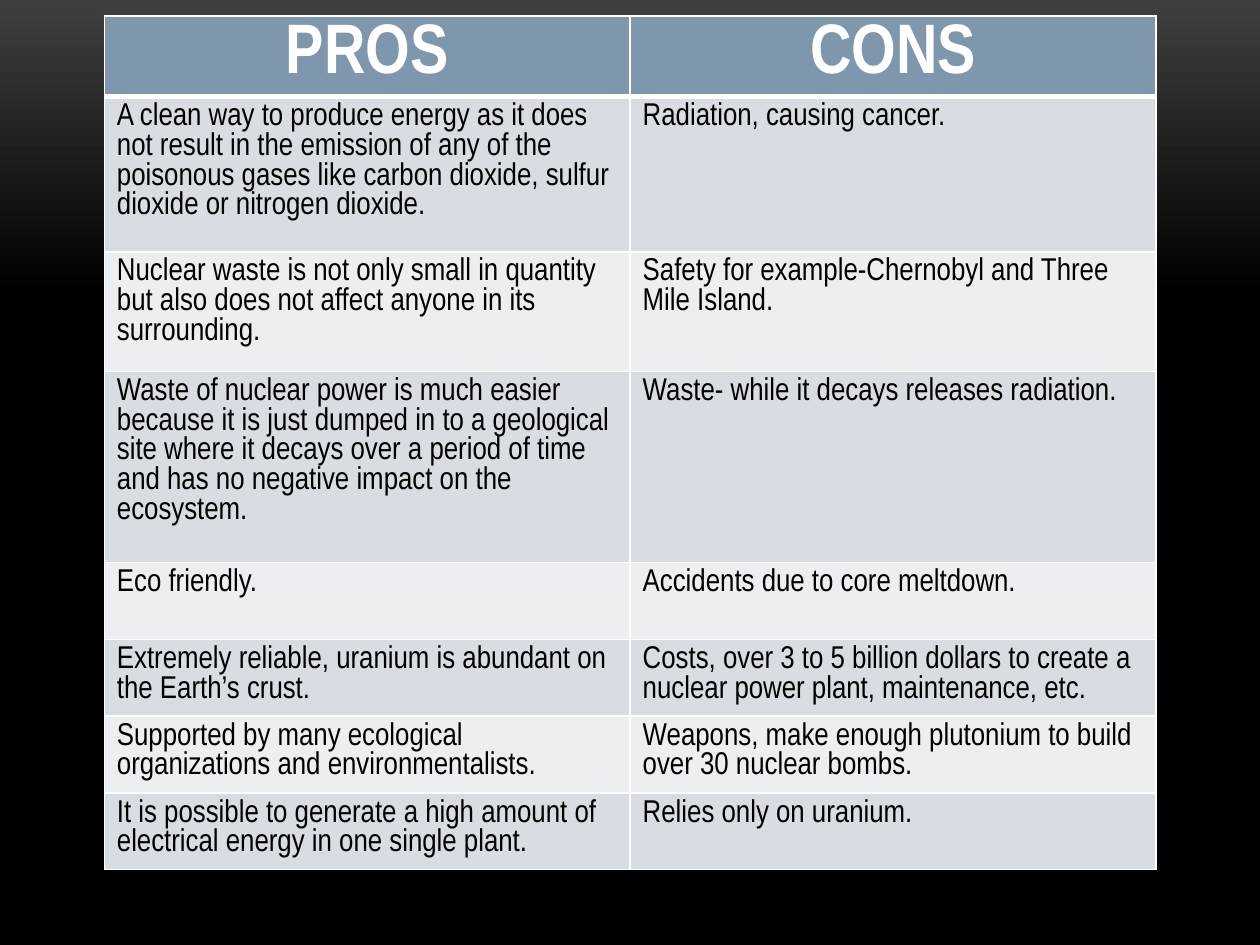
from lxml.etree import fromstring
from pptx import Presentation
from pptx.dml.color import RGBColor
from pptx.enum.text import PP_ALIGN as Align
from pptx.oxml.ns import nsdecls
from pptx.util import Pt

WHITE = RGBColor(0xFF, 0xFF, 0xFF)
BLACK = RGBColor(0, 0, 0)
CHARCOAL = RGBColor(0x3F, 0x3F, 0x3F)
HEADER_BLUE = RGBColor(0x7E, 0x97, 0xAD)
BAND_DARK = RGBColor(0xD8, 0xDD, 0xE3)
BAND_LIGHT = RGBColor(0xEC, 0xEF, 0xF1)

COLUMN_WIDTH = 300.5
ROW_HEIGHTS = [46.1, 88.6, 68.4, 109.2] + [43.9] * 4
ARGUMENTS = [
    ("PROS", "CONS"),
    ("A clean way to produce energy as it does not result in the emission of any of the "
     "poisonous gases like carbon dioxide, sulfur dioxide or nitrogen dioxide.",
     "Radiation, causing cancer."),
    ("Nuclear waste is not only small in quantity but also does not affect anyone in its "
     "surrounding.",
     "Safety for example-Chernobyl and Three Mile Island."),
    ("Waste of nuclear power is much easier because it is just dumped in to a geological "
     "site where it decays over a period of time and has no negative impact on the ecosystem.",
     "Waste- while it decays releases radiation."),
    ("Eco friendly.", "Accidents due to core meltdown."),
    ("Extremely reliable, uranium is abundant on the Earth’s crust.",
     "Costs, over 3 to 5 billion dollars to create a nuclear power plant, maintenance, etc."),
    ("Supported by many ecological organizations and environmentalists.",
     "Weapons, make enough plutonium to build over 30 nuclear bombs."),
    ("It is possible to generate a high amount of electrical energy in one single plant.",
     "Relies only on uranium."),
]


def write(cell, text, size=18, color=BLACK, bold=False, align=Align.LEFT):
    paragraph = cell.text_frame.paragraphs[0]
    paragraph.alignment = align
    run = paragraph.add_run()
    run.text = text
    run.font.name = "Arial Narrow"
    run.font.size = Pt(size)
    run.font.bold = bold
    run.font.color.rgb = color


def add_borders(cell, top=1, bottom=1):
    """Draw white borders; they must come before the fill in the cell properties."""
    sides = [("lnL", 1), ("lnR", 1), ("lnT", top), ("lnB", bottom)]
    for position, (side, width) in enumerate(sides):
        line = fromstring(
            f'<a:{side} {nsdecls("a")} w="{Pt(width)}"><a:solidFill>'
            f'<a:srgbClr val="{WHITE}"/></a:solidFill></a:{side}>')
        cell._tc.get_or_add_tcPr().insert(position, line)


deck = Presentation()
deck.slide_width, deck.slide_height = Pt(720), Pt(540)
slide = deck.slides.add_slide(deck.slide_layouts[6])

backdrop = slide.background.fill
backdrop.gradient()
backdrop.gradient_angle = 270
for stop, (position, color) in zip(backdrop.gradient_stops, [(0, CHARCOAL), (0.31, BLACK)]):
    stop.position = position
    stop.color.rgb = color

comparison = slide.shapes.add_table(
    len(ARGUMENTS), 2, Pt(59.6), Pt(9.2), Pt(2 * COLUMN_WIDTH), Pt(sum(ROW_HEIGHTS))).table
for column in comparison.columns:
    column.width = Pt(COLUMN_WIDTH)

for row_index, (height, arguments) in enumerate(zip(ROW_HEIGHTS, ARGUMENTS)):
    comparison.rows[row_index].height = Pt(height)
    for column_index, argument in enumerate(arguments):
        cell = comparison.cell(row_index, column_index)
        cell.fill.solid()
        if row_index == 0:
            cell.fill.fore_color.rgb = HEADER_BLUE
            write(cell, argument, size=40, color=WHITE, bold=True, align=Align.CENTER)
        else:
            cell.fill.fore_color.rgb = BAND_DARK if row_index % 2 else BAND_LIGHT
            write(cell, argument)
        add_borders(cell, top=3 if row_index == 1 else 1, bottom=3 if row_index == 0 else 1)

deck.save("out.pptx")
